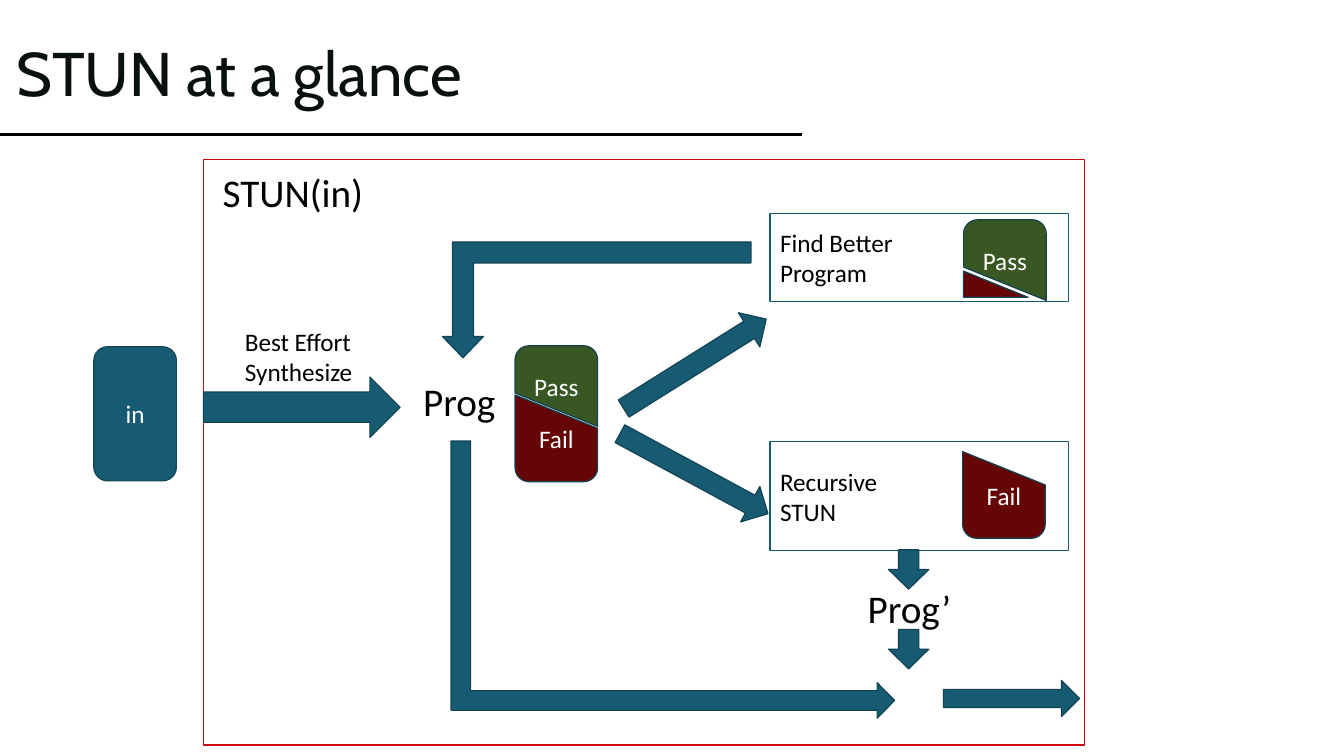
from math import cos, pi, sin

from lxml.etree import SubElement
from pptx import Presentation
from pptx.dml.color import RGBColor
from pptx.enum.shapes import MSO_CONNECTOR, MSO_SHAPE
from pptx.enum.text import MSO_ANCHOR, PP_ALIGN
from pptx.oxml.ns import qn
from pptx.util import Pt

COLORS = {
    "title": "08110B", "black": "000000", "white": "FFFFFF", "frame": "CD0909",
    "teal": "175B73", "edge": "114355", "pass": "385723", "fail": "660505",
}
TITLE = ("STUN at a glance", (4.3, 2.2, 540.7, 104.4))
RULE = (0, 95.8, 573.1)
FRAME = (145.4, 113.8, 629.3, 418.3)
INPUT = ("in", (67, 247.7, 59, 95.8))
STEPS = [
    ("Find Better\vProgram", MSO_SHAPE.RECTANGLE, (550.1, 152.6, 213.1, 62.6)),
    ("Recursive\vSTUN", MSO_SHAPE.FLOWCHART_PROCESS, (550.1, 315.4, 213.1, 77.8)),
]
LABELS = [
    ("STUN(in)", 28, (151.9, 116.6, 115.9, 41)),
    ("Best Effort\vSynthesize", 18, (167.8, 229.7, 92.2, 51.1)),
    ("Prog", 28, (295.2, 265.7, 67, 41)),
    ("Prog’", 28, (612.7, 414, 74.9, 41)),
]
ARROWS = [
    ((145.4, 269.3, 140.4, 43.2), 0),
    ((436.3, 245.5, 120.2, 28.8), 327.9),
    ((435.6, 324, 120.2, 28.8), 28.4),
    ((635, 392.4, 28.1, 28.8), 90),
    ((635, 449.3, 28.1, 28.8), 90),
    ((673.9, 486, 97.2, 25.9), 0),
]
BENT_ARROWS = [
    ((316.1, 172.8, 220.3, 82.8), 180, (0.181, 0.176, 0.184)),
    ((381.6, 255.6, 198, 316.8), 90, (0.07, 0.064, 0.063)),
]
HALVES = [
    ("Pass", 367.9, 247),
    ("Fail", 367.9, 282.2),
    ("Pass", 688.3, 157),
    ("Fail", 687.6, 322.6),
]
HALF_WIDTH, SLANT, CORNER = 59, 23.8, 10
HALF_HEIGHTS = {"Pass": 57.6, "Fail": 61.9}
SLIVER = [(688.3, 193.7), (734.4, 212.4), (688.3, 212.4)]


def color(name):
    return RGBColor.from_string(COLORS[name])


def points(values):
    return [Pt(value) for value in values]


def paint(shape, fill, edge="edge"):
    shape.shadow.inherit = False
    shape.fill.solid()
    shape.fill.fore_color.rgb = color(fill)
    shape.line.color.rgb = color(edge)
    shape.line.width = Pt(0.85)


def write(shape, text, size, ink, align=PP_ALIGN.LEFT, font="Calibri"):
    shape.text_frame.text = text
    for paragraph in shape.text_frame.paragraphs:
        paragraph.alignment = align
        paragraph.font.name = font
        paragraph.font.size = Pt(size)
        paragraph.font.color.rgb = color(ink)


def add_preset(kind, box, fill, edge="edge", rotation=0):
    shape = slide.shapes.add_shape(kind, *points(box))
    paint(shape, fill, edge)
    shape.rotation = rotation
    return shape


def add_outline(corners, fill):
    start, *rest = [points(corner) for corner in corners]
    builder = slide.shapes.build_freeform(*start)
    builder.add_line_segments(rest, close=True)
    shape = builder.convert_to_shape()
    paint(shape, fill)
    return shape


def half_outline(name, left, top):
    height = HALF_HEIGHTS[name]
    outline = [(HALF_WIDTH, height), (0, height - SLANT)]
    for center, start in ((CORNER, pi), (HALF_WIDTH - CORNER, 1.5 * pi)):
        for step in range(9):
            angle = start + step * pi / 16
            outline.append((center + CORNER * cos(angle), CORNER + CORNER * sin(angle)))
    if name == "Fail":
        outline = [(HALF_WIDTH - x, height - y) for x, y in outline]
    return [(left + x, top + y) for x, y in outline]


prs = Presentation()
prs.slide_width, prs.slide_height = Pt(960), Pt(540)
slide = prs.slides.add_slide(prs.slide_layouts[5])

heading, heading_box = TITLE
title = slide.shapes.title
title.left, title.top, title.width, title.height = points(heading_box)
write(title, heading, 44, "title", font="Cabin")
title.text_frame.vertical_anchor = MSO_ANCHOR.MIDDLE
title.text_frame.paragraphs[0].line_spacing = 0.9

rule_left, rule_y, rule_right = RULE
rule = slide.shapes.add_connector(
    MSO_CONNECTOR.STRAIGHT, *points((rule_left, rule_y, rule_right, rule_y)))
rule.line.color.rgb = color("black")
rule.line.width = Pt(2.25)
SubElement(rule._element.spPr, qn("a:effectLst"))

add_preset(MSO_SHAPE.RECTANGLE, FRAME, "white", "frame")

input_text, input_box = INPUT
write(add_preset(MSO_SHAPE.ROUNDED_RECTANGLE, input_box, "teal"),
      input_text, 18, "white", PP_ALIGN.CENTER)

for text, kind, box in STEPS:
    step_box = add_preset(kind, box, "white", "teal")
    write(step_box, text, 18, "black")
    step_box.text_frame.vertical_anchor = MSO_ANCHOR.MIDDLE

for box, rotation in ARROWS:
    add_preset(MSO_SHAPE.RIGHT_ARROW, box, "teal", rotation=rotation)

for box, rotation, proportions in BENT_ARROWS:
    bent_arrow = add_preset(MSO_SHAPE.BENT_UP_ARROW, box, "teal", rotation=rotation)
    for index, proportion in enumerate(proportions):
        bent_arrow.adjustments[index] = proportion

add_outline(SLIVER, "fail")
for name, left, top in HALVES:
    half = add_outline(half_outline(name, left, top), name.lower())
    write(half, name, 18, "white", PP_ALIGN.CENTER)
    half.text_frame.vertical_anchor = MSO_ANCHOR.MIDDLE

for text, size, box in LABELS:
    label = slide.shapes.add_textbox(*points(box))
    label.text_frame.word_wrap = False
    write(label, text, size, "black")

prs.save("out.pptx")
